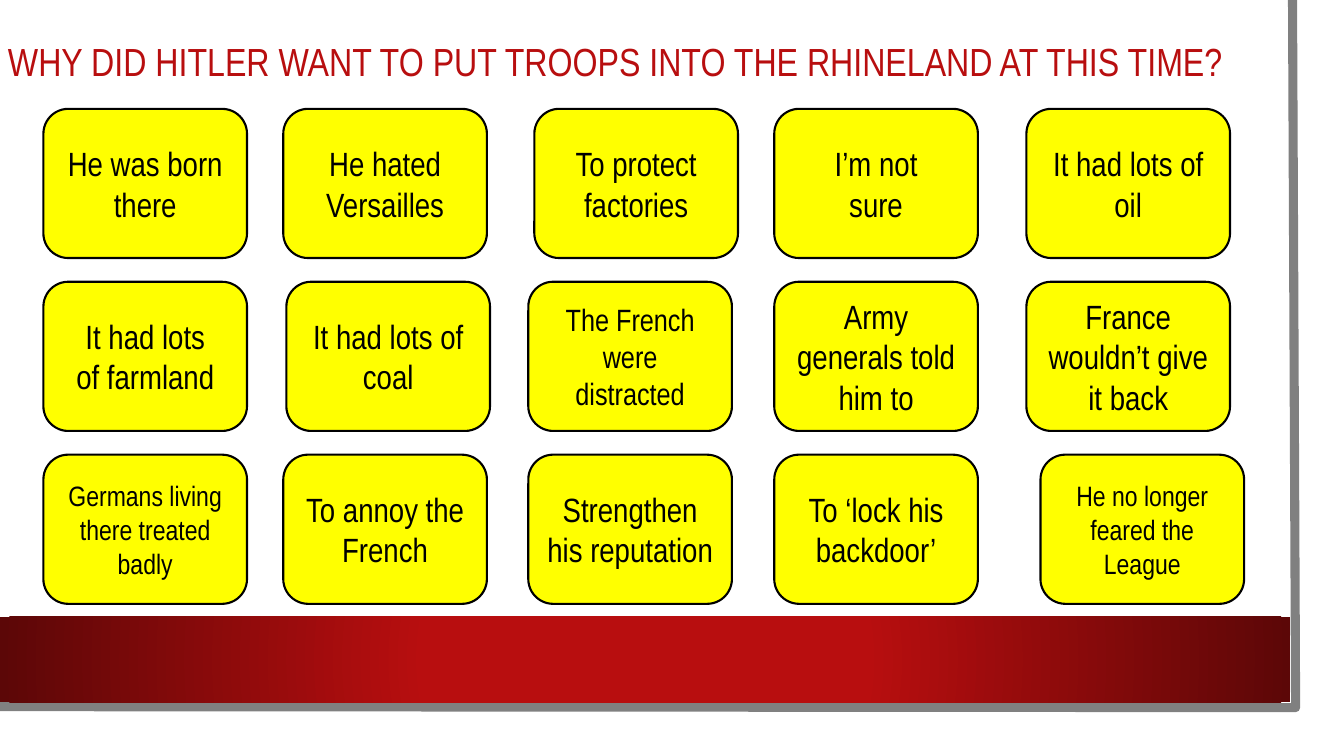
from lxml import etree
from pptx import Presentation
from pptx.dml.color import RGBColor
from pptx.enum.shapes import MSO_SHAPE
from pptx.enum.text import MSO_ANCHOR, MSO_AUTO_SIZE, PP_ALIGN
from pptx.oxml import parse_xml
from pptx.oxml.ns import nsdecls, qn
from pptx.util import Inches, Pt

RECT, ROUNDED = MSO_SHAPE.RECTANGLE, MSO_SHAPE.ROUNDED_RECTANGLE
MIDDLE, CENTER, NO_FIT = MSO_ANCHOR.MIDDLE, PP_ALIGN.CENTER, MSO_AUTO_SIZE.NONE

# Card grid, in percent of the slide's width or height
COLUMNS = (3.23, 21.08, 39.31, 57.61, 76.37)
FIRST_ROW, ROW_PITCH = 14.4, 22.87
CARD_WIDTH, CARD_HEIGHT = 15.15, 19.73

QUESTION = "WHY DID HITLER WANT TO PUT TROOPS INTO THE RHINELAND AT THIS TIME?"
REASONS = (
    ("He was born there", "He hated\vVersailles", "To protect factories",
     "I’m not\vsure", "It had lots of oil"),
    ("It had lots\vof farmland", "It had lots of coal", "The French were distracted",
     "Army generals told him to", "France wouldn’t give it back"),
    ("Germans living there treated badly", "To annoy the French",
     "Strengthen\vhis reputation", "To ‘lock his backdoor’",
     "He no longer feared the League"),
)
# Exceptions to the grid, keyed by (row, column)
SMALLER_TEXT = {(1, 2): 22, (2, 0): 20, (2, 4): 20}
SHIFT_RIGHT = {(0, 2): 0.45, (1, 1): 0.23, (2, 4): 1.05}


def color(hex_value):
    return RGBColor.from_string(hex_value)


def set_all(target, values):
    for name, value in values.items():
        setattr(target, name, value)


class RhinelandSlide:
    font = "Arial Narrow"
    red, dark_red, yellow = "B80E0F", "5C0707", "FFFF00"
    white, black, gray = "FFFFFF", "000000", "808080"

    def __init__(self, deck):
        self.width, self.height = deck.slide_width, deck.slide_height
        self.slide = deck.slides.add_slide(deck.slide_layouts[5])

    def x(self, percent):
        return round(self.width * percent / 100)

    def y(self, percent):
        return round(self.height * percent / 100)

    def area(self, left, top, width, height):
        return self.x(left), self.y(top), self.x(width), self.y(height)

    def outline(self, shape, hex_value, points):
        shape.line.color.rgb = color(hex_value)
        shape.line.width = Pt(points)

    def wording(self, frame, text, size, hex_value, spacing=1.0):
        set_all(frame, {"text": text, "word_wrap": True,
                        "vertical_anchor": MIDDLE, "auto_size": NO_FIT})
        paragraph = frame.paragraphs[0]
        set_all(paragraph, {"alignment": CENTER, "line_spacing": spacing})
        for run in paragraph.runs:
            set_all(run.font, {"name": self.font, "size": Pt(size)})
            run.font.color.rgb = color(hex_value)

    def panel(self, kind, area, fill):
        shape = self.slide.shapes.add_shape(kind, *self.area(*area))
        shape.shadow.inherit = False
        shape.fill.solid()
        shape.fill.fore_color.rgb = color(fill)
        shape.line.fill.background()
        return shape

    def frame_edge(self, points):
        corners = [(self.x(x), self.y(y)) for x, y in points]
        builder = self.slide.shapes.build_freeform(*corners[0])
        builder.add_line_segments(corners[1:], close=False)
        edge = builder.convert_to_shape()
        edge.shadow.inherit = False
        edge.fill.background()
        self.outline(edge, self.gray, 6.5)

    def glowing_band(self, area):
        band = self.panel(RECT, area, self.red)
        band.fill.gradient()
        glow = ((0.34, self.red), (1, self.dark_red))
        for stop, (position, hex_value) in zip(band.fill.gradient_stops, glow):
            stop.position = position
            stop.color.rgb = color(hex_value)
        # Radiate from the centre instead of along a line
        gradient = band.element.spPr.find(qn("a:gradFill"))
        radial = parse_xml(f'<a:path {nsdecls("a")} path="circle"/>')
        etree.SubElement(radial, qn("a:fillToRect"),
                         {side: "50000" for side in "ltrb"})
        gradient.replace(gradient.find(qn("a:lin")), radial)

    def title(self, text, area):
        heading = self.slide.shapes.title
        places = ("left", "top", "width", "height")
        set_all(heading, dict(zip(places, self.area(*area))))
        self.wording(heading.text_frame, text, 28, self.red, 0.9)
        # Bring the heading in front of the backdrop
        heading.element.getparent().append(heading.element)

    def card(self, row, column, reason):
        cell = row, column
        left = COLUMNS[column] + SHIFT_RIGHT.get(cell, 0)
        top = FIRST_ROW + row * ROW_PITCH
        card = self.panel(ROUNDED, (left, top, CARD_WIDTH, CARD_HEIGHT), self.yellow)
        self.outline(card, self.black, 1.5)
        self.wording(card.text_frame, reason, SMALLER_TEXT.get(cell, 24), self.black)


def main():
    deck = Presentation()
    set_all(deck, {"slide_width": Inches(13.33), "slide_height": Inches(7.5)})
    page = RhinelandSlide(deck)

    # Backdrop
    page.panel(RECT, (0, 0, 98.28, 96.93), page.white)
    page.frame_edge([(96.17, 0), (96.4, 93.6), (-0.23, 93.47)])
    page.glowing_band((0, 81.6, 96.02, 11.33))

    # Question
    page.title(QUESTION, (-1.05, 0, 93.62, 16.8))

    # Possible reasons
    for row, reasons in enumerate(REASONS):
        for column, reason in enumerate(reasons):
            page.card(row, column, reason)

    deck.save("out.pptx")


if __name__ == "__main__":
    main()
